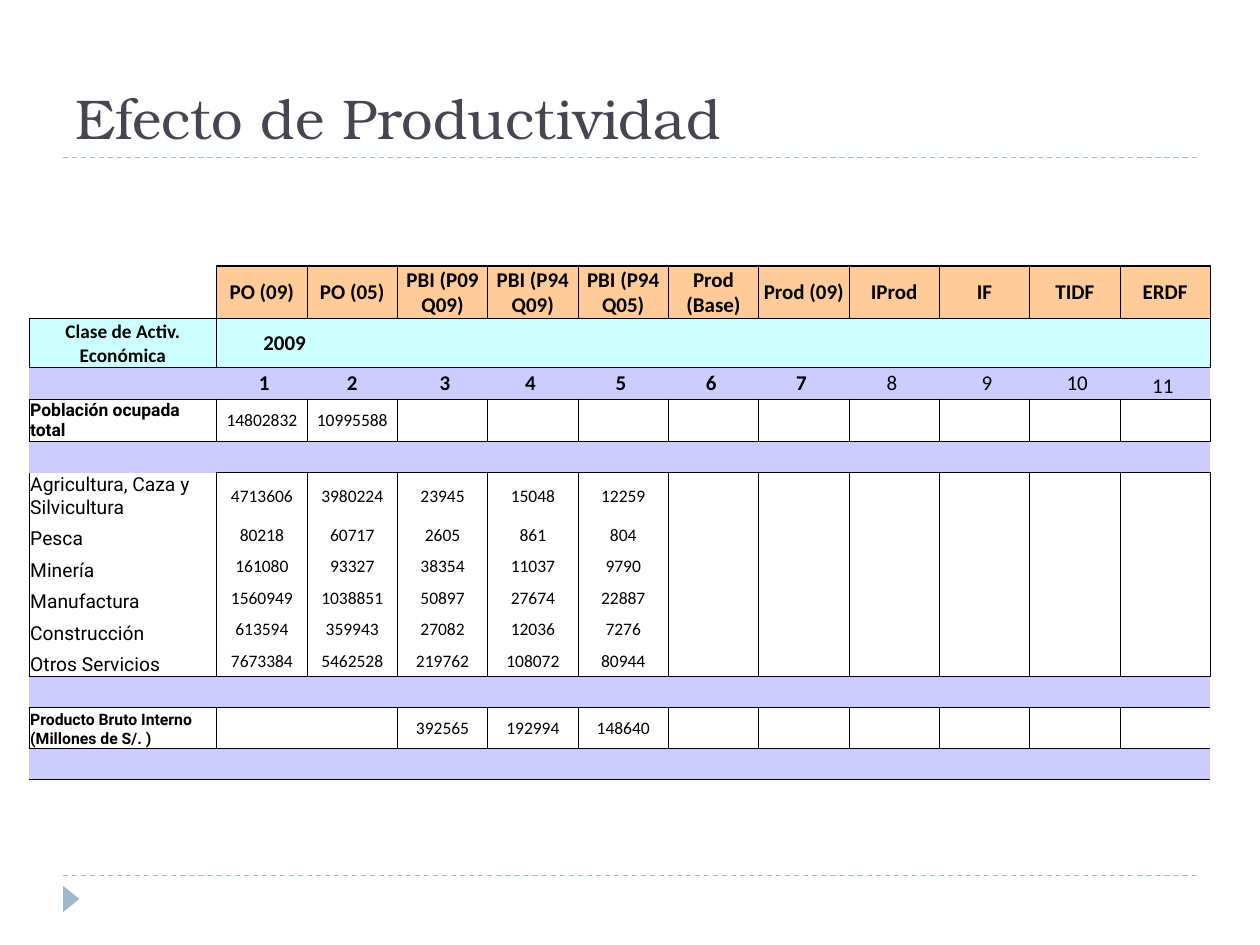
from lxml import etree
from pptx import Presentation
from pptx import dml, util as u
from pptx.dml.color import RGBColor
from pptx.enum import dml as ed, shapes, text
from pptx.oxml.ns import qn

COLORS = {"title": "464653", "accent": "9FB8CD", "ink": "000000",
          "head": "FFCC99", "year": "CCFFFF", "band": "CCCCFF"}
BODY, LABEL, TITLE = "Calibri", "Roboto", "TeX Gyre Bonum"
COLS = 12
ALL = range(COLS + 1)
MID, BOTTOM = text.MSO_ANCHOR.MIDDLE, text.MSO_ANCHOR.BOTTOM
LEFT, CENTER, RIGHT = text.PP_ALIGN.LEFT, text.PP_ALIGN.CENTER, text.PP_ALIGN.RIGHT

HEADERS = ["", "PO (09)", "PO (05)", "PBI (P09 Q09)", "PBI (P94 Q09)", "PBI (P94 Q05)",
           "Prod (Base)", "Prod (09)", "IProd", "IF", "TIDF", "ERDF"]
NUMBERS = ["", " 1", "2", " 3", "4 ", "5 ", "6 ", "7 ", "8 ", " 9", " 10", "11 "]
SECTORS = [
    ["Agricultura, Caza y Silvicultura", "4713606", "3980224", "23945", "15048", "12259"],
    ["Pesca", "80218", "60717", "2605", "861", "804"],
    ["Minería", "161080", "93327", "38354", "11037", "9790"],
    ["Manufactura", "1560949", "1038851", "50897", "27674", "22887"],
    ["Construcción", "613594", "359943", "27082", "12036", "7276"],
    ["Otros Servicios", "7673384", "5462528", "219762", "108072", "80944"],
]
BAND = ("band", 0.25, [], ())
ROWS = [
    ("head", 0.41, HEADERS, range(1, COLS + 1)),
    ("year", 0.39, ["Clase de Activ. Económica", "2009"], (0, 1, COLS)),
    ("number", 0.25, NUMBERS, ()),
    ("total", 0.33, ["Población ocupada total", "14802832", "10995588"], ALL),
    BAND,
    *[("sector", 0.25 if i else 0.36, row, ALL) for i, row in enumerate(SECTORS)],
    BAND,
    ("gdp", 0.32, ["Producto Bruto Interno (Millones de S/. )", "", "",
                   "392565", "192994", "148640"], (0, 1, *range(3, COLS))),
    BAND,
]
RULES = {0: 1, 1: 1, **dict.fromkeys((2, 3, 4, 5, 11, 12, 13, 14), 0.5)}
LABEL_SIZES = {"total": 10, "sector": 11, "gdp": 9}


def color(name):
    """Return the named palette colour."""
    return RGBColor.from_string(COLORS[name])


def add_title(s, x, y, w, h):
    """Place and format the slide title."""
    sp = s.shapes.title
    sp.left, sp.top, sp.width, sp.height = map(u.Inches, (x, y, w, h))
    tf = sp.text_frame
    tf.text = "Efecto de Productividad"
    tf.vertical_anchor = BOTTOM
    p = tf.paragraphs[0]
    p.alignment = LEFT
    f = p.runs[0].font
    f.size, f.name, f.color.rgb = u.Pt(32), TITLE, color("title")


def add_rule(s, x, y, w):
    """Draw a dashed horizontal rule."""
    ln = s.shapes.add_connector(shapes.MSO_CONNECTOR.STRAIGHT, u.Inches(x), u.Inches(y),
                                u.Inches(x + w), u.Inches(y))
    ln.line.color.rgb = color("accent")
    ln.line.width = u.Pt(0.75)
    ln.line.dash_style = ed.MSO_LINE.DASH
    etree.SubElement(ln._element.spPr, qn("a:effectLst"))


def add_marker(s, x, y, w, h):
    """Draw the footer triangle pointing right."""
    sp = s.shapes.add_shape(shapes.MSO_SHAPE.ISOSCELES_TRIANGLE, *map(u.Inches, (x, y, w, h)))
    sp.rotation = 90
    sp.shadow.inherit = False
    sp.fill.solid()
    sp.fill.fore_color.rgb = color("accent")
    sp.line.fill.background()


def rule_width(edge, col):
    """Return the width of a horizontal table edge above or below a column."""
    return 0 if col == 0 and edge in (0, 5) else RULES.get(edge, 0)


def set_borders(cell, widths):
    """Set the left, right, top and bottom borders, in points."""
    tc_pr = cell._tc.get_or_add_tcPr()
    for side, width in zip("LRTB", widths):
        ln = etree.SubElement(tc_pr, qn(f"a:ln{side}"), w=str(int(u.Pt(width))))
        if width:
            fill = etree.SubElement(ln, qn("a:solidFill"))
            etree.SubElement(fill, qn("a:srgbClr"), val=COLORS["ink"])
        else:
            etree.SubElement(ln, qn("a:noFill"))


def text_style(kind, col):
    """Return font, size, bold, alignment and anchor for a cell."""
    if col == 0 and kind in LABEL_SIZES:
        anchor = BOTTOM if kind == "gdp" else MID
        return LABEL, LABEL_SIZES[kind], kind != "sector", LEFT, anchor
    if kind == "year":
        return BODY, 12 if col else 11, True, RIGHT if col else CENTER, MID
    if kind == "number":
        return BODY, 12, col < 8, CENTER, BOTTOM if col == COLS - 1 else MID
    return BODY, 12 if kind == "head" else 10, kind == "head", CENTER, MID


def fill_cell(cell, kind, col, value):
    """Fill a cell and format its text."""
    name = "band" if kind == "number" else kind
    if name in COLORS and (kind, col) != ("head", 0):
        cell.fill.solid()
        cell.fill.fore_color.rgb = color(name)
    else:
        cell.fill.background()
    cell.margin_left = cell.margin_right = cell.margin_top = u.Inches(0.01)
    cell.margin_bottom = 0
    font, size, bold, align, anchor = text_style(kind, col)
    if kind == "sector" and col == 0 and not value.startswith("Agricultura"):
        anchor = BOTTOM
    cell.vertical_anchor = anchor
    p = cell.text_frame.paragraphs[0]
    p.alignment = align
    if not value:
        etree.SubElement(p._p, qn("a:endParaRPr"), sz="1000")
        return
    p.text = value
    f = p.runs[0].font
    f.name, f.size, f.bold, f.color.rgb = font, u.Pt(size), bold, color("ink")


def add_data_table(s, x, y, w, h):
    """Build the productivity table."""
    tbl = s.shapes.add_table(len(ROWS), COLS, *map(u.Inches, (x, y, w, h))).table
    tbl.first_row = tbl.horz_banding = False
    label_w = 1.49
    for c, column in enumerate(tbl.columns):
        column.width = u.Inches((w - label_w) / (COLS - 1) if c else label_w)
    for r, (kind, height, values, verticals) in enumerate(ROWS):
        tbl.rows[r].height = u.Inches(height)
        for c in range(COLS):
            cell = tbl.cell(r, c)
            set_borders(cell, [0.5 * (c in verticals), 0.5 * (c + 1 in verticals),
                               rule_width(r, c), rule_width(r + 1, c)])
            fill_cell(cell, kind, c, values[c] if c < len(values) else "")


def main():
    """Build and save the slide."""
    prs = Presentation()
    prs.slide_width, prs.slide_height = u.Inches(10), u.Inches(7.5)
    s = prs.slides.add_slide(prs.slide_layouts[5])
    for y in (6.95, 1.25):
        add_rule(s, 0.5, y, 9)
    add_marker(s, 0.46, 7.07, 0.21, 0.13)
    add_title(s, 0.5, 0.17, 9, 1.08)
    add_data_table(s, 0.23, 2.11, 9.38, 4.05)
    prs.save("out.pptx")


if __name__ == "__main__":
    main()
